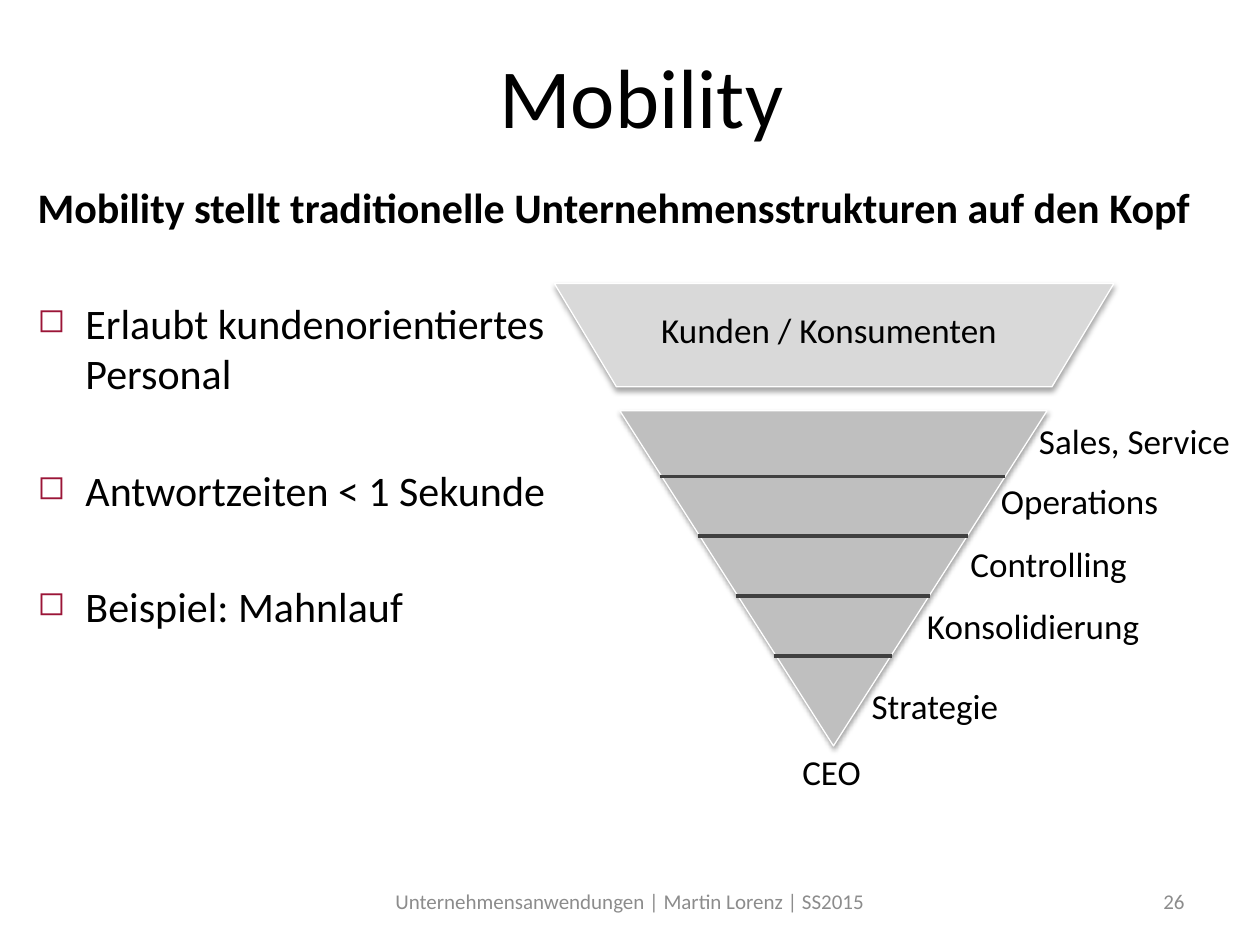
from lxml.etree import SubElement
from pptx import Presentation
from pptx.dml.color import RGBColor
from pptx.enum.shapes import MSO_CONNECTOR, MSO_SHAPE
from pptx.enum.text import MSO_ANCHOR, PP_ALIGN
from pptx.oxml.ns import qn
from pptx.util import Inches, Pt

TITLE = "Mobility"
HEADING = "Mobility stellt traditionelle Unternehmensstrukturen auf den Kopf"
BULLETS = [
    "Erlaubt kundenorientiertes\vPersonal",
    "Antwortzeiten < 1 Sekunde",
    "Beispiel: Mahnlauf",
]
# Label, left, top, width
PYRAMID_LABELS = [
    ("Sales, Service", 7.97, 3.28, 1.89),
    ("Operations", 7.4, 3.76, 1.89),
    ("Controlling", 7.15, 4.26, 1.89),
    ("Konsolidierung", 7.14, 4.75, 2),
    ("Strategie", 6.13, 5.38, 1.89),
    ("Kunden / Konsumenten", 4.9, 2.4, 3.11),
    ("CEO", 6.23, 5.91, 0.7),
]
FOOTER = "Unternehmensanwendungen | Martin Lorenz | SS2015"
PAGE_NUMBER = "26"

FONT = "Calibri"
BLACK, GRAY, WHITE = "000000", "8C8C8C", "FFFFFF"
PYRAMID_FILL, CUSTOMER_FILL, DIVIDER = "BFBFBF", "D9D9D9", "404040"
BULLET_COLOR = "9B1537"

DIVIDER_COUNT = 4
PYRAMID_CENTER = 6.61
FIRST_DIVIDER_Y, DIVIDER_GAP = 3.78, 0.475
FIRST_HALF_WIDTH, HALF_WIDTH_STEP = 1.37, 0.3


def rgb(color):
    return RGBColor.from_string(color)


def style(paragraph, size, color=BLACK, bold=False, align=PP_ALIGN.LEFT, before=0):
    paragraph.alignment = align
    paragraph.space_before = Pt(before)
    font = paragraph.font
    font.name, font.size, font.bold = FONT, Pt(size), bold
    font.color.rgb = rgb(color)


def add_text(slide, text, box, size, anchor=MSO_ANCHOR.TOP, **look):
    frame = slide.shapes.add_textbox(*map(Inches, box)).text_frame
    frame.word_wrap = True
    frame.vertical_anchor = anchor
    frame.text = text
    style(frame.paragraphs[0], size, **look)
    return frame


def add_bullet(paragraph):
    properties = paragraph._p.get_or_add_pPr()
    properties.set("marL", str(Inches(0.38)))
    properties.set("indent", str(-Inches(0.38)))
    color = SubElement(properties, qn("a:buClr"))
    SubElement(color, qn("a:srgbClr"), val=BULLET_COLOR)
    SubElement(properties, qn("a:buSzPct"), val="80000")
    SubElement(properties, qn("a:buChar"), char="◻")


def add_inverted(slide, kind, box, fill):
    """Add an upside-down shape with a white outline and a soft shadow below."""
    shape = slide.shapes.add_shape(kind, *map(Inches, box))
    shape.rotation = 180
    shape.fill.solid()
    shape.fill.fore_color.rgb = rgb(fill)
    shape.line.color.rgb = rgb(WHITE)
    shape.line.width = Pt(0.75)
    effects = SubElement(shape._element.spPr, qn("a:effectLst"))
    shadow = SubElement(effects, qn("a:outerShdw"), blurRad=str(Pt(3.1)),
                        dist=str(Pt(1.8)), dir="5400000", rotWithShape="0")
    color = SubElement(shadow, qn("a:srgbClr"), val=BLACK)
    SubElement(color, qn("a:alpha"), val="35000")
    return shape


def add_divider(slide, level):
    y = Inches(FIRST_DIVIDER_Y + level * DIVIDER_GAP)
    half = FIRST_HALF_WIDTH - level * HALF_WIDTH_STEP
    line = slide.shapes.add_connector(
        MSO_CONNECTOR.STRAIGHT,
        Inches(PYRAMID_CENTER - half), y, Inches(PYRAMID_CENTER + half), y)
    line.line.color.rgb = rgb(DIVIDER)
    line.line.width = Pt(2)
    SubElement(line._element.spPr, qn("a:effectLst"))


def main():
    deck = Presentation()
    deck.slide_width, deck.slide_height = Inches(10), Inches(7.5)
    slide = deck.slides.add_slide(deck.slide_layouts[6])

    add_text(slide, TITLE, (0.59, 0.13, 9, 1.25), 48,
             anchor=MSO_ANCHOR.MIDDLE, align=PP_ALIGN.CENTER)

    body = add_text(slide, HEADING, (0.2, 1.39, 9.39, 4.8), 24, bold=True, before=4.2)
    for text in BULLETS:
        paragraph = body.add_paragraph()
        paragraph.text = text
        style(paragraph, 24, before=37.6)
        add_bullet(paragraph)

    add_inverted(slide, MSO_SHAPE.ISOSCELES_TRIANGLE,
                 (4.92, 3.26, 3.39, 2.66), PYRAMID_FILL)
    customers = add_inverted(slide, MSO_SHAPE.TRAPEZOID,
                             (4.4, 2.25, 4.44, 0.82), CUSTOMER_FILL)
    customers.adjustments[0] = 0.6
    for level in range(DIVIDER_COUNT):
        add_divider(slide, level)
    for label, left, top, width in PYRAMID_LABELS:
        add_text(slide, label, (left, top, width, 0.55), 20,
                 align=PP_ALIGN.RIGHT, before=3.5)

    add_text(slide, PAGE_NUMBER, (7.17, 6.95, 2.33, 0.4), 12,
             anchor=MSO_ANCHOR.MIDDLE, color=GRAY, align=PP_ALIGN.RIGHT)
    add_text(slide, FOOTER, (0.75, 6.95, 8.5, 0.4), 12,
             anchor=MSO_ANCHOR.MIDDLE, color=GRAY, align=PP_ALIGN.CENTER)

    deck.save("out.pptx")


if __name__ == "__main__":
    main()
